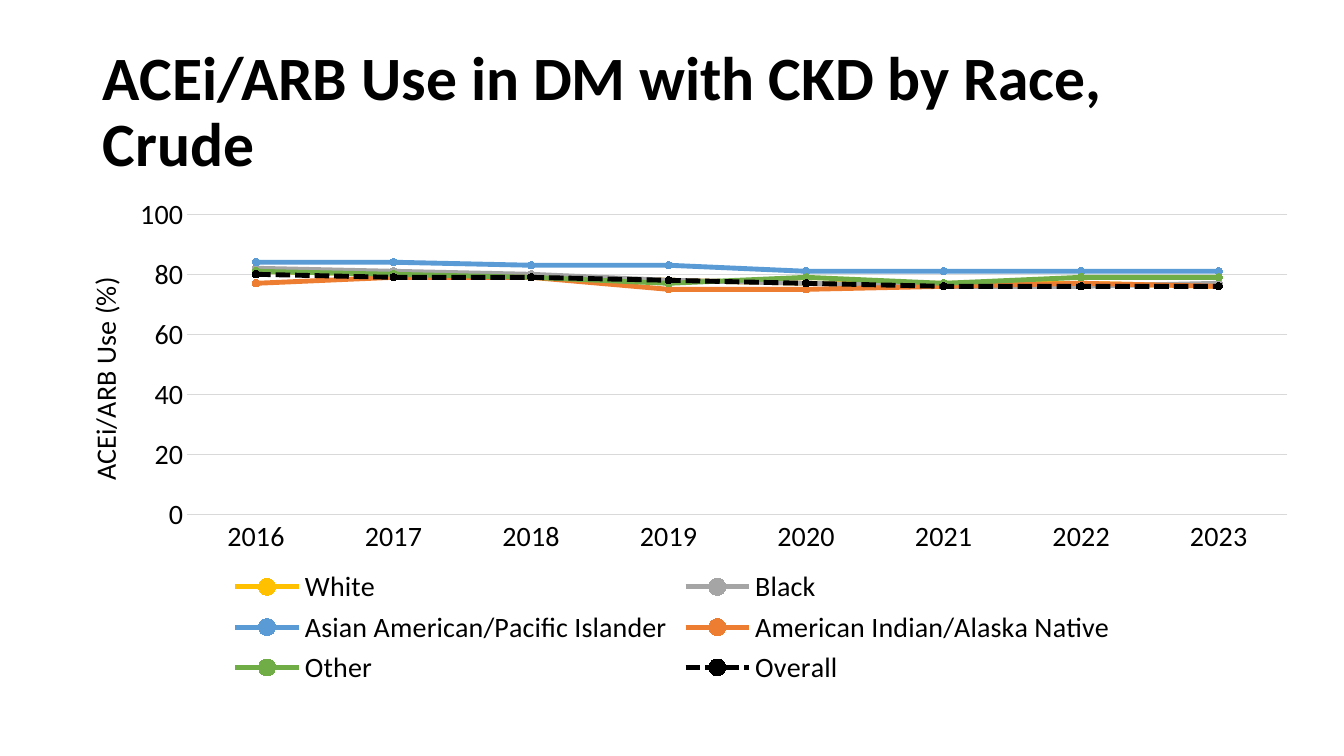
from lxml.etree import SubElement
from pptx import Presentation
from pptx.chart.data import CategoryChartData
from pptx.dml.color import RGBColor
from pptx.enum.chart import XL_CHART_TYPE, XL_LEGEND_POSITION, XL_MARKER_STYLE, XL_TICK_MARK
from pptx.enum.dml import MSO_LINE
from pptx.enum.text import MSO_ANCHOR, MSO_AUTO_SIZE
from pptx.oxml import parse_xml
from pptx.oxml.ns import nsdecls, qn
from pptx.util import Inches, Pt

COLORS = {
    "text": "000000",
    "grid": "D9D9D9",
    "White": "FFC000",
    "Black": "A5A5A5",
    "Asian American/Pacific Islander": "5B9BD5",
    "American Indian/Alaska Native": "ED7D31",
    "Other": "70AD47",
    "Overall": "000000",
}
USE_BY_RACE = {
    "White": (81, 80, 79, 78, 77, 77, 77, 76),
    "Black": (82, 81, 80, 78, 77, 76, 76, 77),
    "Asian American/Pacific Islander": (84, 84, 83, 83, 81, 81, 81, 81),
    "American Indian/Alaska Native": (77, 79, 79, 75, 75, 76, 77, 76),
    "Other": (81, 80, 79, 77, 79, 77, 79, 79),
    "Overall": (80, 79, 79, 78, 77, 76, 76, 76),
}


def write_text(frame, text, size=20, bold=False, line_spacing=None):
    frame.text = text
    paragraph = frame.paragraphs[0]
    if line_spacing:
        paragraph.line_spacing = line_spacing
    font = paragraph.runs[0].font
    font.name, font.size, font.bold = "Calibri", Pt(size), bold
    font.color.rgb = RGBColor.from_string(COLORS["text"])


def place_in_chart(parent, index, **settings):
    """Give a chart part a manual layout, as fractions of the chart's size."""
    for automatic in parent.findall(qn("c:layout")):
        parent.remove(automatic)
    layout = parse_xml(f"<c:layout {nsdecls('c')}><c:manualLayout/></c:layout>")
    for tag, value in settings.items():
        SubElement(layout[0], qn(f"c:{tag}")).set("val", str(value))
    parent.insert(index, layout)


prs = Presentation()
prs.slide_width, prs.slide_height = Inches(13.33), Inches(7.5)
slide = prs.slides.add_slide(prs.slide_layouts[5])

title = slide.shapes.title
title.left, title.top = Inches(0.92), Inches(0.4)
title.width, title.height = Inches(11.5), Inches(1.45)
heading = title.text_frame
write_text(heading, "ACEi/ARB Use in DM with CKD by Race, Crude", size=44, bold=True, line_spacing=0.9)
heading.word_wrap = True
heading.auto_size = MSO_AUTO_SIZE.NONE
heading.vertical_anchor = MSO_ANCHOR.MIDDLE
heading.paragraphs[0].alignment = 1

chart_data = CategoryChartData(number_format="0")
chart_data.categories = [str(year) for year in range(2016, 2024)]
for race, percentages in USE_BY_RACE.items():
    chart_data.add_series(race, percentages)
chart = slide.shapes.add_chart(
    XL_CHART_TYPE.LINE_MARKERS, Inches(0.42), Inches(1.85), Inches(12.5), Inches(5), chart_data
).chart
chart.has_title = False
chart.font.name, chart.font.size = "Calibri", Pt(20)
chart.font.color.rgb = RGBColor.from_string(COLORS["text"])
chart.has_legend = True
chart.legend.position = XL_LEGEND_POSITION.BOTTOM
chart.legend.include_in_layout = False
chart.plots[0].vary_by_categories = False

years, use = chart.category_axis, chart.value_axis
for axis in (years, use):
    axis.major_tick_mark = axis.minor_tick_mark = XL_TICK_MARK.NONE
use.has_major_gridlines = True
use.minimum_scale, use.maximum_scale, use.major_unit = 0, 100, 20
use.format.line.fill.background()
for rule in (years.format.line, use.major_gridlines.format.line):
    rule.color.rgb = RGBColor.from_string(COLORS["grid"])
    rule.width = Pt(0.75)
write_text(use.axis_title.text_frame, "ACEi/ARB Use (%)")

place_in_chart(use.axis_title._element, 1, xMode="edge", yMode="edge", x=0.03, y=0.17)
place_in_chart(
    chart._chartSpace.chart.plotArea, 0, layoutTarget="inner", xMode="edge", yMode="edge",
    x=0.115, y=0.055, w=0.873, h=0.597,
)

for series in chart.plots[0].series:
    color = RGBColor.from_string(COLORS[series.name])
    series.smooth = False
    series.format.line.color.rgb = color
    series.format.line.width = Pt(3.5)
    if series.name == "Overall":
        series.format.line.dash_style = MSO_LINE.SQUARE_DOT
    series.marker.style = XL_MARKER_STYLE.CIRCLE
    series.marker.size = 5
    series.marker.format.fill.solid()
    series.marker.format.fill.fore_color.rgb = color
    series.marker.format.line.color.rgb = color

prs.save("out.pptx")
